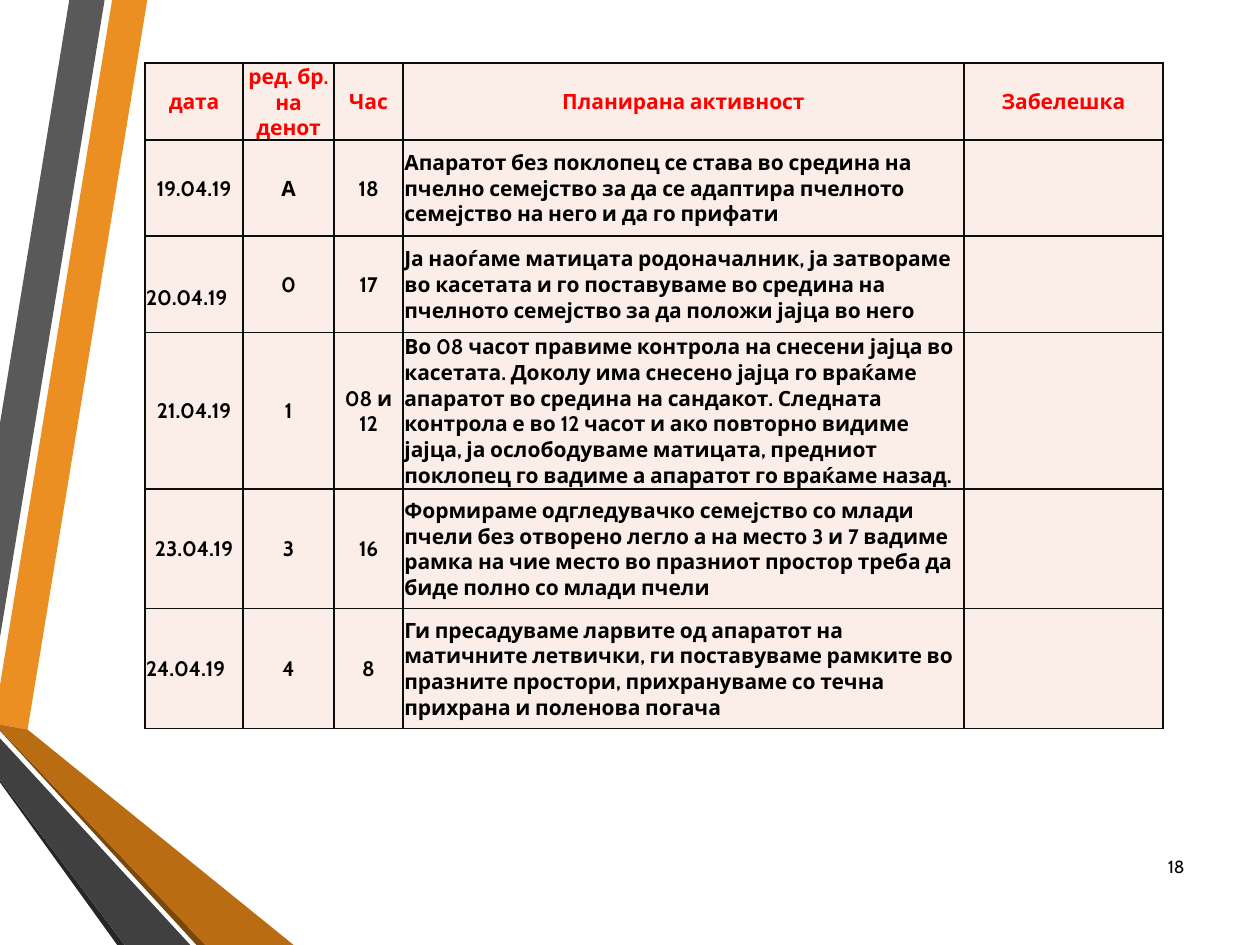
from lxml import etree
from pptx import Presentation
from pptx.dml.color import RGBColor
from pptx.enum.text import MSO_ANCHOR, PP_ALIGN
from pptx.oxml.ns import qn
from pptx.util import Pt

MIDDLE = MSO_ANCHOR.MIDDLE
LEFT, CENTER, RIGHT = PP_ALIGN.LEFT, PP_ALIGN.CENTER, PP_ALIGN.RIGHT
FONT = "Cabin"
COLORS = {
    "orange": "EB8F22", "grey": "595959", "black_edge": "262626",
    "brown_edge": "7B480B", "brown": "B96C11", "charcoal": "404040",
    "cell": "FBEEE8", "border": "0D0D0D", "header": "FF0000", "text": "000000",
}

RIBBONS = [
    ("orange", [(0, 391.7), (0, 414), (15.8, 416.9), (84.2, 0), (64.1, 0)]),
    ("grey", [(59.8, 0), (39.6, 0), (0, 241.9), (0, 364.3)]),
    ("black_edge", [(0, 445.7), (0, 447.1), (67, 540), (71.3, 540)]),
    ("brown_edge", [(0, 416.9), (0, 417.6), (112.3, 540), (117.4, 540)]),
    ("brown", [(0, 416.9), (117.4, 540), (167.8, 540), (15.8, 416.9), (0, 414)]),
    ("charcoal", [(0, 445.7), (71.3, 540), (108.7, 540), (0, 421.9)]),
]

COL_WIDTHS = [56.2, 51.8, 39.6, 320.4, 113.8]
ROW_HEIGHTS = [28.1, 55.1, 55.1, 89.3, 68.4, 68.4]
ACTIVITY_COL = 3
LEFT_DATES = ("20.04.19", "24.04.19")
LOWERED_DATE = "20.04.19"
PLAN = [
    ("дата", "ред. бр. на денот", "Час", "Планирана активност", "Забелешка"),
    ("19.04.19", "А", "18",
     "Апаратот без поклопец се става во средина на пчелно семејство за да се "
     "адаптира пчелното семејство на него и да го прифати", ""),
    ("20.04.19", "0", "17",
     "Ја наоѓаме матицата родоначалник, ја затвораме во касетата и го "
     "поставуваме во средина на пчелното семејство за да положи јајца во него", ""),
    ("21.04.19", "1", "08 и 12",
     "Во 08 часот правиме контрола на снесени јајца во касетата. Доколу има "
     "снесено јајца го враќаме апаратот во средина на сандакот. Следната "
     "контрола е во 12 часот и ако повторно видиме јајца, ја ослободуваме "
     "матицата, предниот поклопец го вадиме а апаратот го враќаме назад.", ""),
    ("23.04.19", "3", "16",
     "Формираме одгледувачко семејство со млади пчели без отворено легло а на "
     "место 3 и 7 вадиме рамка на чие место во празниот простор треба да биде "
     "полно со млади пчели", ""),
    ("24.04.19", "4", "8",
     "Ги пресадуваме ларвите од апаратот на матичните летвички, ги поставуваме "
     "рамките во празните простори, прихрануваме со течна прихрана и поленова "
     "погача", ""),
]


def rgb(name):
    return RGBColor.from_string(COLORS[name])


def add_ribbon(s, color, points):
    corners = [(Pt(x), Pt(y)) for x, y in points]
    builder = s.shapes.build_freeform(*corners[0], scale=1.0)
    builder.add_line_segments(corners[1:], close=True)
    sp = builder.convert_to_shape()
    sp.shadow.inherit = False
    sp.fill.solid()
    sp.fill.fore_color.rgb = rgb(color)
    sp.line.fill.background()


def write(tf, text, size, color, align, bold=False):
    tf.text = text
    p = tf.paragraphs[0]
    p.alignment = align
    # The paragraph font also sets the line height of empty cells.
    for font in [p.font] + [r.font for r in p.runs]:
        font.name, font.size, font.bold = FONT, Pt(size), bold
        font.color.rgb = rgb(color)


def set_borders(cell):
    tcPr = cell._tc.get_or_add_tcPr()
    for side in ("a:lnL", "a:lnR", "a:lnT", "a:lnB"):
        ln = etree.SubElement(tcPr, qn(side), w=str(Pt(1)))
        fill = etree.SubElement(ln, qn("a:solidFill"))
        etree.SubElement(fill, qn("a:srgbClr"), val=COLORS["border"])


def style_cell(cell, text, color, align):
    set_borders(cell)
    cell.fill.solid()
    cell.fill.fore_color.rgb = rgb("cell")
    cell.vertical_anchor = MIDDLE
    cell.margin_left = cell.margin_right = cell.margin_top = Pt(0.7)
    cell.margin_bottom = 0
    if text == LOWERED_DATE:
        cell.margin_top = Pt(15)
    write(cell.text_frame, text, 12, color, align, bold=True)


def add_plan_table(s):
    frame = s.shapes.add_table(len(ROW_HEIGHTS), len(COL_WIDTHS), Pt(82.8), Pt(36),
                               Pt(sum(COL_WIDTHS)), Pt(sum(ROW_HEIGHTS)))
    table = frame.table
    for col, width in zip(table.columns, COL_WIDTHS):
        col.width = Pt(width)
    for row, height in zip(table.rows, ROW_HEIGHTS):
        row.height = Pt(height)
    for i, values in enumerate(PLAN):
        for j, text in enumerate(values):
            flush_left = i > 0 and (j == ACTIVITY_COL or text in LEFT_DATES)
            style_cell(table.cell(i, j), text, "text" if i else "header",
                       LEFT if flush_left else CENTER)


def add_page_number(s, number):
    tf = s.shapes.add_textbox(Pt(650.2), Pt(481), Pt(33.8), Pt(28.8)).text_frame
    tf.word_wrap = True
    tf.vertical_anchor = MIDDLE
    write(tf, number, 10, "text", RIGHT)


def main():
    prs = Presentation()
    prs.slide_width, prs.slide_height = Pt(720), Pt(540)
    s = prs.slides.add_slide(prs.slide_layouts[6])
    for color, points in RIBBONS:
        add_ribbon(s, color, points)
    add_page_number(s, "18")
    add_plan_table(s)
    prs.save("out.pptx")


if __name__ == "__main__":
    main()
